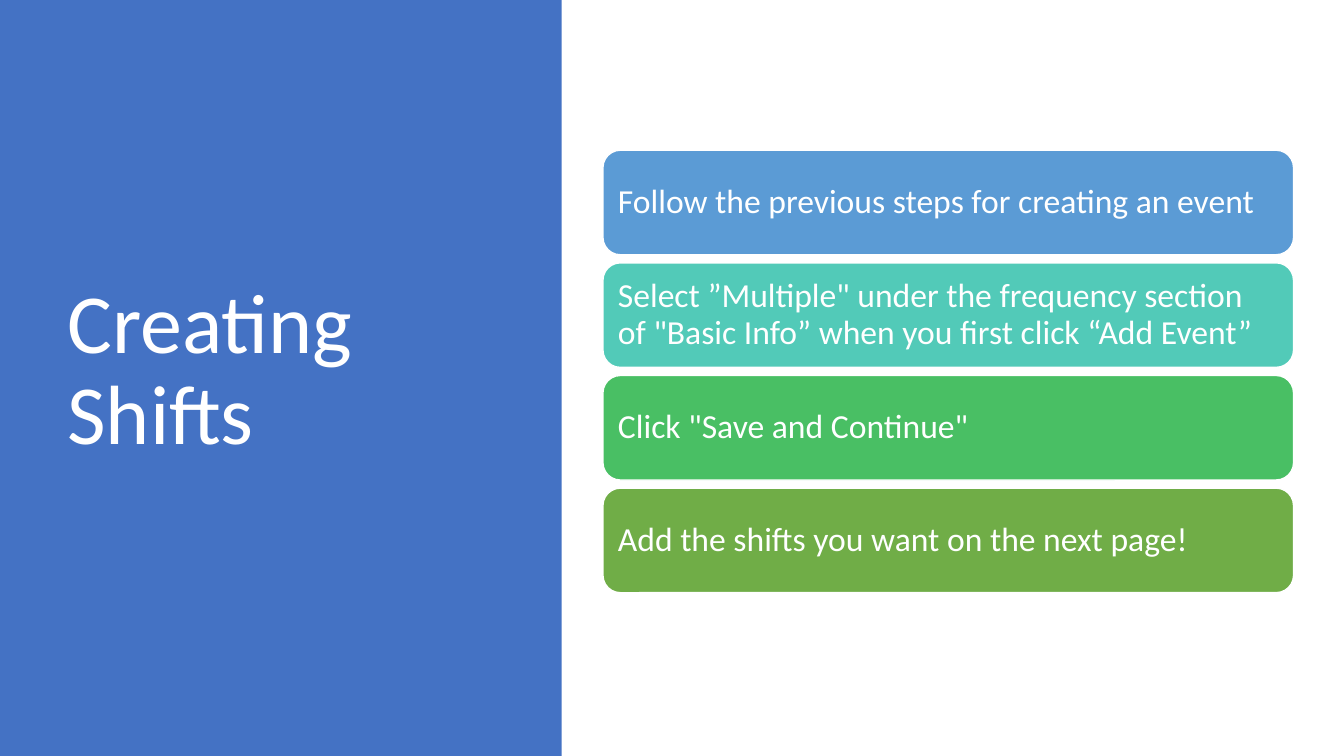
from dataclasses import dataclass

from pptx import Presentation
from pptx.dml.color import RGBColor
from pptx.enum.shapes import MSO_SHAPE
from pptx.enum.text import MSO_ANCHOR, PP_ALIGN
from pptx.util import Inches, Pt


@dataclass(frozen=True)
class Theme:
    font: str = "Calibri"
    title_size: int = 60
    step_size: int = 24
    panel: str = "4472C4"
    light: str = "FFFFFF"
    steps: tuple = ("5B9BD5", "52CAB8", "49BF64", "70AD47")


THEME = Theme()
STEPS = (
    "Follow the previous steps for creating an event",
    "Select ”Multiple\" under the frequency section of \"Basic Info” "
    "when you first click “Add Event”",
    "Click \"Save and Continue\"",
    "Add the shifts you want on the next page!",
)


def add_block(slide, kind, left, top, width, height, color):
    shape = slide.shapes.add_shape(
        kind, Inches(left), Inches(top), Inches(width), Inches(height))
    shape.shadow.inherit = False
    shape.fill.solid()
    shape.fill.fore_color.rgb = RGBColor.from_string(color)
    shape.line.fill.background()
    return shape


def write_text(shape, text, size):
    """Fill a shape with left-aligned, vertically centred light text."""
    frame = shape.text_frame
    frame.word_wrap = True
    frame.vertical_anchor = MSO_ANCHOR.MIDDLE
    paragraph = frame.paragraphs[0]
    paragraph.text = text
    paragraph.alignment = PP_ALIGN.LEFT
    paragraph.line_spacing = 0.9
    paragraph.font.name = THEME.font
    paragraph.font.size = Pt(size)
    paragraph.font.color.rgb = RGBColor.from_string(THEME.light)


def add_title_panel(slide, left, top, width, height, title):
    add_block(slide, MSO_SHAPE.RECTANGLE, left, top, width, height, THEME.panel)
    title_box = slide.shapes.add_textbox(
        Inches(left + 0.57), Inches(top + 0.68),
        Inches(width - 1.41), Inches(height - 1.48))
    write_text(title_box, title, THEME.title_size)


def add_step_list(slide, left, top, width, height, steps, gap=0.08):
    """Stack one rounded bar per step, evenly filling the given box."""
    bar_height = (height + gap) / len(steps) - gap
    for index, (text, color) in enumerate(zip(steps, THEME.steps)):
        bar = add_block(slide, MSO_SHAPE.ROUNDED_RECTANGLE, left,
                        top + index * (bar_height + gap), width, bar_height, color)
        bar.line.color.rgb = RGBColor.from_string(THEME.light)
        bar.line.width = Pt(1)
        frame = bar.text_frame
        # The rounded corners already inset the text by about 0.05 inches.
        frame.margin_left = frame.margin_right = Inches(0.1)
        frame.margin_top = frame.margin_bottom = Inches(0.1)
        write_text(bar, text, THEME.step_size)


def main():
    presentation = Presentation()
    presentation.slide_width = Inches(13.33)
    presentation.slide_height = Inches(7.5)
    slide = presentation.slides.add_slide(presentation.slide_layouts[6])
    add_title_panel(slide, 0, 0, 5.57, 7.5, "Creating Shifts")
    add_step_list(slide, 5.98, 1.49, 6.85, 4.39, STEPS)
    presentation.save("out.pptx")


if __name__ == "__main__":
    main()
